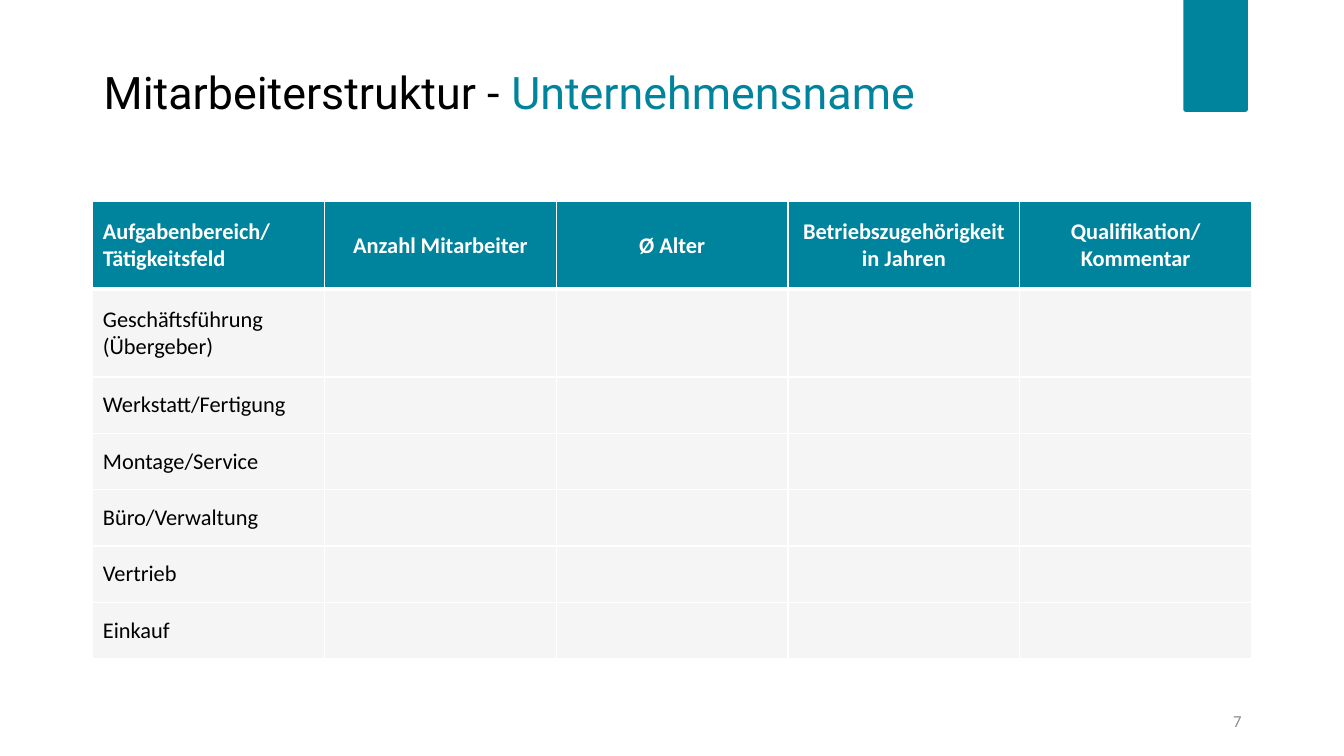
from lxml import etree
from pptx import Presentation
from pptx.dml.color import RGBColor
from pptx.enum.shapes import MSO_SHAPE
from pptx.enum.text import MSO_ANCHOR, PP_ALIGN
from pptx.oxml.ns import qn
from pptx.util import Cm, Pt

ROUND = MSO_SHAPE.ROUNDED_RECTANGLE
TOP, MIDDLE = MSO_ANCHOR.TOP, MSO_ANCHOR.MIDDLE
LEFT, CENTER, RIGHT = PP_ALIGN.LEFT, PP_ALIGN.CENTER, PP_ALIGN.RIGHT

# Content
TITLE = [("Mitarbeiterstruktur - ", "000000"), ("Unternehmensname", "00839D")]
HEADS = ["Aufgabenbereich/ Tätigkeitsfeld", "Anzahl Mitarbeiter", "Ø Alter",
         "Betriebszugehörigkeit in Jahren", "Qualifikation/ Kommentar"]
AREAS = ["Geschäftsführung (Übergeber)", "Werkstatt/Fertigung", "Montage/Service",
         "Büro/Verwaltung", "Vertrieb", "Einkauf"]
PAGE = "7"

TEAL, GREY, WHITE, BLACK = "00839D", "F5F5F5", "FFFFFF", "000000"
COL, TALL, LOW = 5.84, 2.21, 1.42


def color(code):
    return RGBColor.from_string(code)


def style(run, face, size, code, bold=False):
    font = run.font
    font.name, font.size, font.bold = face, Pt(size), bold
    font.color.rgb = color(code)


def border(cell, side, width):
    props = cell._tc.get_or_add_tcPr()
    line = etree.SubElement(props, qn("a:" + side), w=str(Pt(width)))
    fill = etree.SubElement(line, qn("a:solidFill"))
    etree.SubElement(fill, qn("a:srgbClr"), val=WHITE)


def fill_cell(cell, row, col, text):
    head = row == 0
    for side in ("lnL", "lnR", "lnT", "lnB"):
        thick = (row, side) in ((0, "lnB"), (1, "lnT"))
        border(cell, side, 3 if thick else 1)
    cell.fill.solid()
    cell.fill.fore_color.rgb = color(TEAL if head else GREY)
    cell.vertical_anchor = MIDDLE
    if text:
        cell.text_frame.text = text
        para = cell.text_frame.paragraphs[0]
        para.alignment = CENTER if col else LEFT
        style(para.runs[0], "Calibri", 16, WHITE if head else BLACK, head)


deck = Presentation()
deck.slide_width, deck.slide_height = Cm(33.87), Cm(19.05)
slide = deck.slides.add_slide(deck.slide_layouts[5])
shapes = slide.shapes

# Corner tab
tab = shapes.add_shape(ROUND, Cm(29.82), Cm(-0.05), Cm(1.63), Cm(2.87))
tab.adjustments[0] = 0.04
tab.shadow.inherit = False
tab.fill.solid()
tab.fill.fore_color.rgb = color(TEAL)
tab.line.fill.background()

# Title
title = shapes.title
title.left, title.top, title.width, title.height = Cm(2.36), Cm(1.65), Cm(29.2), Cm(3.1)
title.text_frame.vertical_anchor = TOP
para = title.text_frame.paragraphs[0]
para.alignment, para.line_spacing = LEFT, 0.9
for text, code in TITLE:
    run = para.add_run()
    run.text = text
    style(run, "Roboto", 32, code)

# Staff table
rows = [HEADS] + [[area] + [""] * (len(HEADS) - 1) for area in AREAS]
highs = [TALL] * 2 + [LOW] * (len(rows) - 2)
table = shapes.add_table(len(rows), len(HEADS), Cm(2.34), Cm(5.08),
                         Cm(COL * len(HEADS)), Cm(sum(highs))).table
for column in table.columns:
    column.width = Cm(COL)
for r, (texts, high) in enumerate(zip(rows, highs)):
    table.rows[r].height = Cm(high)
    for c, text in enumerate(texts):
        fill_cell(table.cell(r, c), r, c, text)

# Page number
box = shapes.add_textbox(Cm(23.92), Cm(17.66), Cm(7.62), Cm(1.01))
frame = box.text_frame
frame.word_wrap, frame.vertical_anchor = True, MIDDLE
frame.text = PAGE
frame.paragraphs[0].alignment = RIGHT
style(frame.paragraphs[0].runs[0], "Calibri", 12, "8C8C8C")

deck.save("out.pptx")
